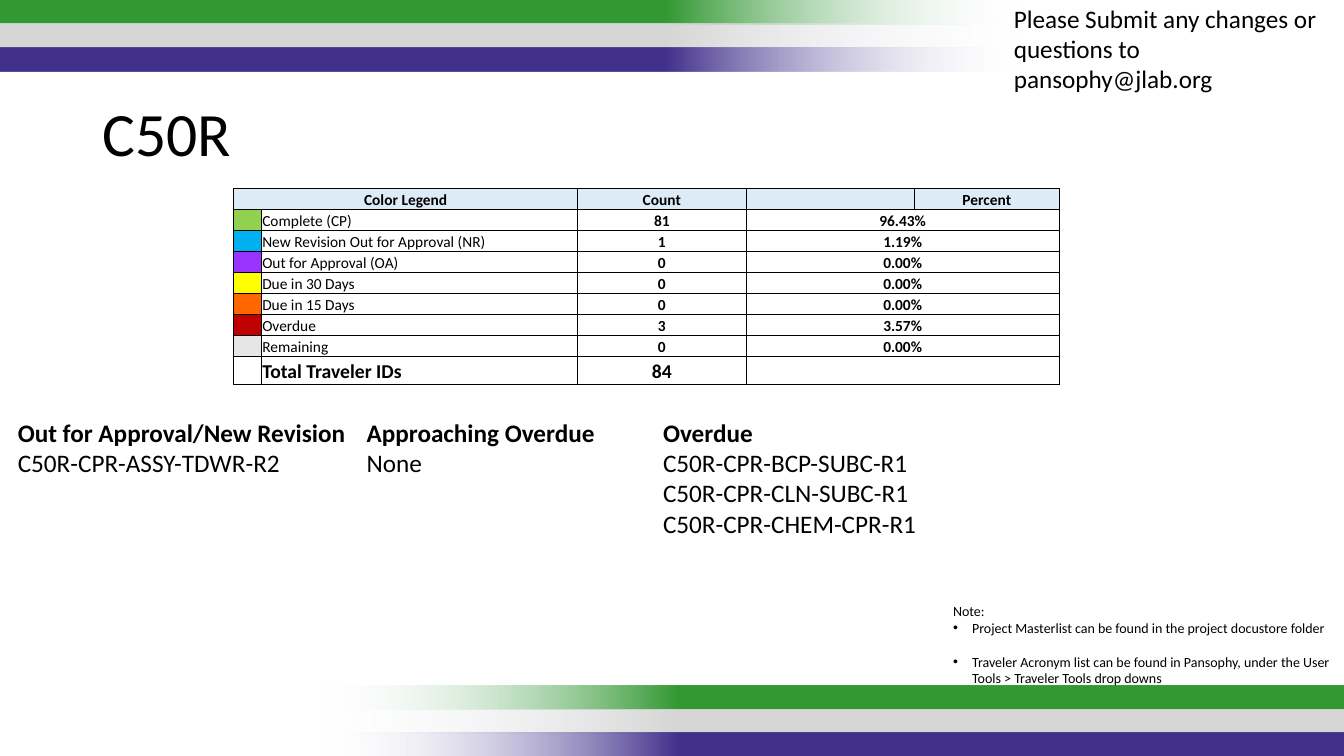
from lxml import etree
from pptx import Presentation
from pptx.dml.color import RGBColor
from pptx.enum.shapes import MSO_SHAPE
from pptx.enum.text import MSO_ANCHOR, PP_ALIGN
from pptx.oxml import parse_xml
from pptx.oxml.ns import nsdecls, qn
from pptx.util import Cm, Pt

RECT = MSO_SHAPE.RECTANGLE
TOP, MIDDLE, BOTTOM = MSO_ANCHOR.TOP, MSO_ANCHOR.MIDDLE, MSO_ANCHOR.BOTTOM
LEFT, CENTER = PP_ALIGN.LEFT, PP_ALIGN.CENTER

BLACK = RGBColor(0x00, 0x00, 0x00)
GREEN = RGBColor(0x33, 0x99, 0x33)
GREY = RGBColor(0xD6, 0xD6, 0xD6)
INDIGO = RGBColor(0x42, 0x31, 0x8C)
MIST = RGBColor(0xF7, 0xFA, 0xFD)
HEADER_BLUE = RGBColor(0xDD, 0xEB, 0xF7)
COMPLETE = RGBColor(0x92, 0xD0, 0x50)
NEW_REVISION = RGBColor(0x00, 0xB0, 0xF0)
OUT_FOR_APPROVAL = RGBColor(0x99, 0x33, 0xFF)
DUE_30 = RGBColor(0xFF, 0xFF, 0x00)
DUE_15 = RGBColor(0xFF, 0x66, 0x00)
OVERDUE = RGBColor(0xC0, 0x00, 0x00)
REMAINING = RGBColor(0xE7, 0xE6, 0xE6)

LEGEND = [
    (COMPLETE, "Complete (CP)", "81", "96.43%"),
    (NEW_REVISION, "New Revision Out for Approval (NR)", "1", "1.19%"),
    (OUT_FOR_APPROVAL, "Out for Approval (OA)", "0", "0.00%"),
    (DUE_30, "Due in 30 Days", "0", "0.00%"),
    (DUE_15, "Due in 15 Days", "0", "0.00%"),
    (OVERDUE, "Overdue", "3", "3.57%"),
    (REMAINING, "Remaining", "0", "0.00%"),
]
LISTS = [
    (0.2, 8.76, "Out for Approval/New Revision", ["C50R-CPR-ASSY-TDWR-R2"]),
    (8.99, 7.49, "Approaching Overdue", ["None"]),
    (16.46, 15.32, "Overdue", ["C50R-CPR-BCP-SUBC-R1", "C50R-CPR-CLN-SUBC-R1",
                               "C50R-CPR-CHEM-CPR-R1"]),
]


def put_text(p, text, size=18, bold=False, align=LEFT, before=0, spacing=None, bullet=False):
    """Fill a paragraph with one formatted run."""
    p.alignment = align
    if before:
        p.space_before = Pt(before)
    if spacing:
        p.line_spacing = spacing
    if bullet:
        pPr = p._p.get_or_add_pPr()
        pPr.set("marL", str(Cm(0.48)))
        pPr.set("indent", str(-Cm(0.48)))
        etree.SubElement(pPr, qn("a:buFont"), typeface="Arial")
        etree.SubElement(pPr, qn("a:buChar"), char="•")
    if not text:
        etree.SubElement(p._p, qn("a:endParaRPr"), sz=str(size * 100))
        return
    r = p.add_run()
    r.text = text
    r.font.name = "Calibri"
    r.font.size = Pt(size)
    r.font.bold = bold
    r.font.color.rgb = BLACK


class StatusSlide:
    """Holds the current slide and draws its elements."""

    def __init__(self, prs):
        self.s = prs.slides.add_slide(prs.slide_layouts[6])

    def bar(self, left, top, color, rotation=0):
        """Draw a band that fades out at its start."""
        sp = self.s.shapes.add_shape(RECT, Cm(left), Cm(top), Cm(25.83), Cm(0.61))
        sp.shadow.inherit = False
        sp.line.fill.background()
        sp.rotation = rotation
        grad = parse_xml(
            f'<a:gradFill {nsdecls("a")} rotWithShape="1"><a:gsLst>'
            f'<a:gs pos="0"><a:srgbClr val="{MIST}"><a:alpha val="0"/></a:srgbClr></a:gs>'
            f'<a:gs pos="35000"><a:srgbClr val="{color}"/></a:gs>'
            f'<a:gs pos="100000"><a:srgbClr val="{color}"/></a:gs>'
            '</a:gsLst><a:lin ang="0" scaled="0"/></a:gradFill>')
        sp._element.spPr.find(qn("a:prstGeom")).addnext(grad)

    def box(self, left, top, width, height, paragraphs, anchor=TOP):
        """Draw a text box from (text, format) pairs."""
        sp = self.s.shapes.add_textbox(Cm(left), Cm(top), Cm(width), Cm(height))
        tf = sp.text_frame
        tf.word_wrap = True
        tf.vertical_anchor = anchor
        for i, (text, style) in enumerate(paragraphs):
            p = tf.add_paragraph() if i else tf.paragraphs[0]
            put_text(p, text, **style)

    def cell(self, cell, text, borders, fill=None, **style):
        """Format one table cell."""
        cell.margin_left = cell.margin_right = cell.margin_top = Cm(0.03)
        cell.margin_bottom = 0
        cell.vertical_anchor = BOTTOM
        tcPr = cell._tc.get_or_add_tcPr()
        for side, width in borders.items():
            tcPr.append(parse_xml(
                f'<a:ln{side} {nsdecls("a")} w="{Pt(width)}"><a:solidFill>'
                f'<a:srgbClr val="{BLACK}"/></a:solidFill></a:ln{side}>'))
        if fill is None:
            cell.fill.background()
        else:
            cell.fill.solid()
            cell.fill.fore_color.rgb = fill
        put_text(cell.text_frame.paragraphs[0], text, **style)

    def table(self, left, top, widths, heights, rows, fills):
        """Draw the legend table with a heavier outer edge."""
        frame = self.s.shapes.add_table(len(rows), len(widths), Cm(left), Cm(top),
                                        Cm(sum(widths)), Cm(sum(heights)))
        tbl = frame.table
        tbl.first_row = tbl.horz_banding = False
        for column, width in zip(tbl.columns, widths):
            column.width = Cm(width)
        for row, height in zip(tbl.rows, heights):
            row.height = Cm(height)
        last = len(rows) - 1
        for i, row in enumerate(rows):
            for j, text in enumerate(row):
                borders = {"L": 0.5 if j else 1, "R": 0.5,
                           "T": 0.5 if i else 1, "B": 1 if i == last else 0.5}
                fill = HEADER_BLUE if i == 0 else fills[i] if j == 0 else None
                self.cell(tbl.cell(i, j), text, borders, fill,
                          size=14 if i == last and text else 11,
                          bold=i in (0, last) or j > 1,
                          align=CENTER if i == 0 or j > 1 else LEFT)
            first = 3 if i else 0
            tbl.cell(i, first).merge(tbl.cell(i, first + 1))


def main():
    """Build the status slide."""
    prs = Presentation()
    prs.slide_width, prs.slide_height = Cm(33.87), Cm(19.05)
    slide = StatusSlide(prs)

    for i, color in enumerate((GREEN, GREY, INDIGO)):
        slide.bar(-0.03, 0.6 * i, color, rotation=180)
        slide.bar(8.07, 17.27 + 0.6 * i, color)

    slide.box(2.34, 2.18, 29.21, 2.51, [("C50R", dict(size=44, spacing=0.9))], anchor=MIDDLE)

    rows = [("Color Legend", "", "Count", "", "Percent")]
    rows += [("", label, count, percent, "") for _, label, count, percent in LEGEND]
    rows.append(("", "Total Traveler IDs", "84", "", ""))
    fills = [HEADER_BLUE] + [entry[0] for entry in LEGEND] + [None]
    slide.table(5.89, 4.75, [0.69, 7.98, 4.24, 4.24, 3.66], [0.53] * 8 + [0.69], rows, fills)

    for left, width, heading, travelers in LISTS:
        paragraphs = [(heading, dict(bold=True))] + [(t, {}) for t in travelers]
        slide.box(left, 10.39, width, 0.25 + 0.78 * len(paragraphs), paragraphs)

    slide.box(25.3, -0.05, 8.59, 2.57,
              [("Please Submit any changes or questions to pansophy@jlab.org", {})])
    slide.box(23.77, 15.06, 10.08, 2.39, [
        ("Note:", dict(size=10)),
        ("Project Masterlist can be found in the project docustore folder",
         dict(size=10, bullet=True)),
        ("Traveler Acronym list can be found in Pansophy, under the User Tools > "
         "Traveler Tools drop downs", dict(size=10, bullet=True, before=12)),
    ])
    prs.save("out.pptx")


if __name__ == "__main__":
    main()
